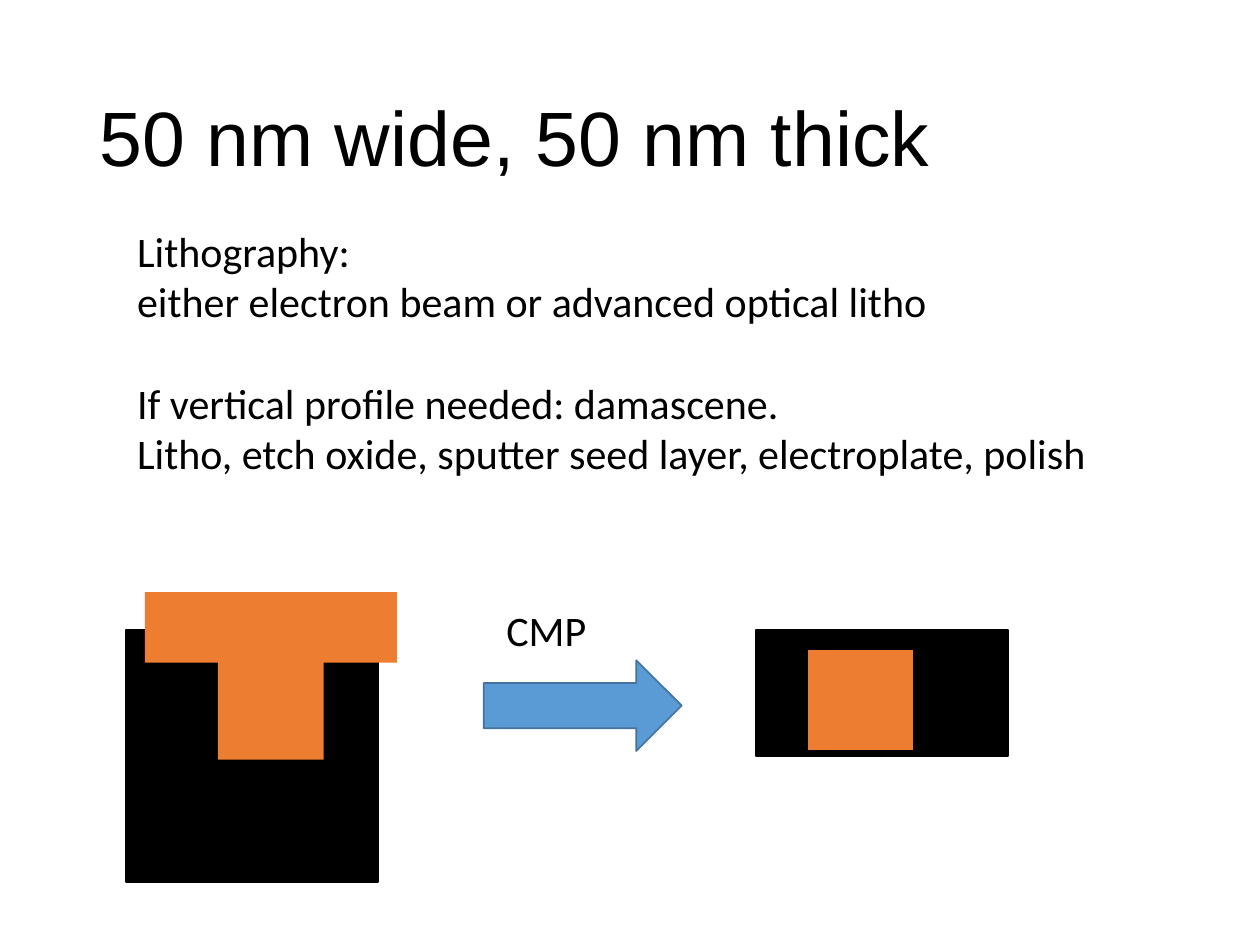
import pptx
import pptx.util
import pptx.dml.color
import pptx.enum.shapes
import pptx.enum.text

Inches, Pt = pptx.util.Inches, pptx.util.Pt
SHAPES = pptx.enum.shapes.MSO_SHAPE
COLORS = {"black": "000000", "copper": "ED7D31", "arrow": "5B9BD5", "arrow_edge": "43739E"}


def rgb(name):
    return pptx.dml.color.RGBColor.from_string(COLORS[name])


def paint(shape, fill, line=None, width=0):
    """Give a shape a solid fill and, if named, an outline."""
    shape.shadow.inherit = False
    shape.fill.solid()
    shape.fill.fore_color.rgb = rgb(fill)
    if line:
        shape.line.color.rgb = rgb(line)
        shape.line.width = Pt(width)
    else:
        shape.line.fill.background()


presentation = pptx.Presentation()
presentation.slide_width, presentation.slide_height = Inches(10), Inches(7.5)
slide = presentation.slides.add_slide(presentation.slide_layouts[5])

title = slide.shapes.title
title.left, title.top, title.width, title.height = map(Inches, (0.69, 0.4, 8.62, 1.45))
title.text_frame.text = "50 nm wide, 50 nm thick"
title.text_frame.vertical_anchor = pptx.enum.text.MSO_ANCHOR.MIDDLE
paragraph = title.text_frame.paragraphs[0]
paragraph.alignment = pptx.enum.text.PP_ALIGN.LEFT
paragraph.line_spacing = 0.9
paragraph.font.name, paragraph.font.size = "Arial", Pt(44)
paragraph.font.color.rgb = rgb("black")

# Text boxes: position, then (text, space before) for each paragraph
text_boxes = [
    ((0.99, 1.74, 8.03, 2.52), [
        ("Lithography:", 0),
        ("either electron beam or advanced optical litho", 0),
        ("If vertical profile needed: damascene.", 29),
        ("Litho, etch oxide, sputter seed layer, electroplate, polish", 0),
    ]),
    ((3.92, 4.75, 1.63, 0.5), [("CMP", 0)]),
]
for position, lines in text_boxes:
    frame = slide.shapes.add_textbox(*map(Inches, position)).text_frame
    frame.word_wrap = True
    for index, (text, space) in enumerate(lines):
        paragraph = frame.add_paragraph() if index else frame.paragraphs[0]
        paragraph.text = text
        paragraph.space_before = Pt(space)
        paragraph.font.name, paragraph.font.size = "Calibri", Pt(24)
        paragraph.font.color.rgb = rgb("black")

# Oxide with a trench, before and after polishing, and the copper in it:
# left, top, height of oxide; copper rectangles; copper outline
stages = [
    (1.15, 5.26, 1.26, [(1.73, 5.15, 0.84, 0.88), (1.15, 4.7, 2, 0.56)], None),
    (5.84, 5.15, 1.3, [(6.41, 5.15, 0.84, 0.81)], "black"),
]
oxide_width = 2
for left, top, height, copper_parts, outline in stages:
    right, middle = left + oxide_width, top + height / 2
    trench_left, trench_right = left + oxide_width / 3, right - oxide_width / 3
    builder = slide.shapes.build_freeform(left, top, scale=Inches(1))
    builder.add_line_segments([
        (trench_left, top), (trench_left, middle), (trench_right, middle),
        (trench_right, top), (right, top), (right, top + height), (left, top + height),
    ], close=True)
    paint(builder.convert_to_shape(), "black", "black", 1.5)
    for part in copper_parts:
        copper = slide.shapes.add_shape(SHAPES.RECTANGLE, *map(Inches, part))
        paint(copper, "copper", outline, 0.75)

arrow = slide.shapes.add_shape(SHAPES.RIGHT_ARROW, *map(Inches, (3.84, 5.24, 1.57, 0.72)))
paint(arrow, "arrow", "arrow_edge", 1)

presentation.save("out.pptx")
